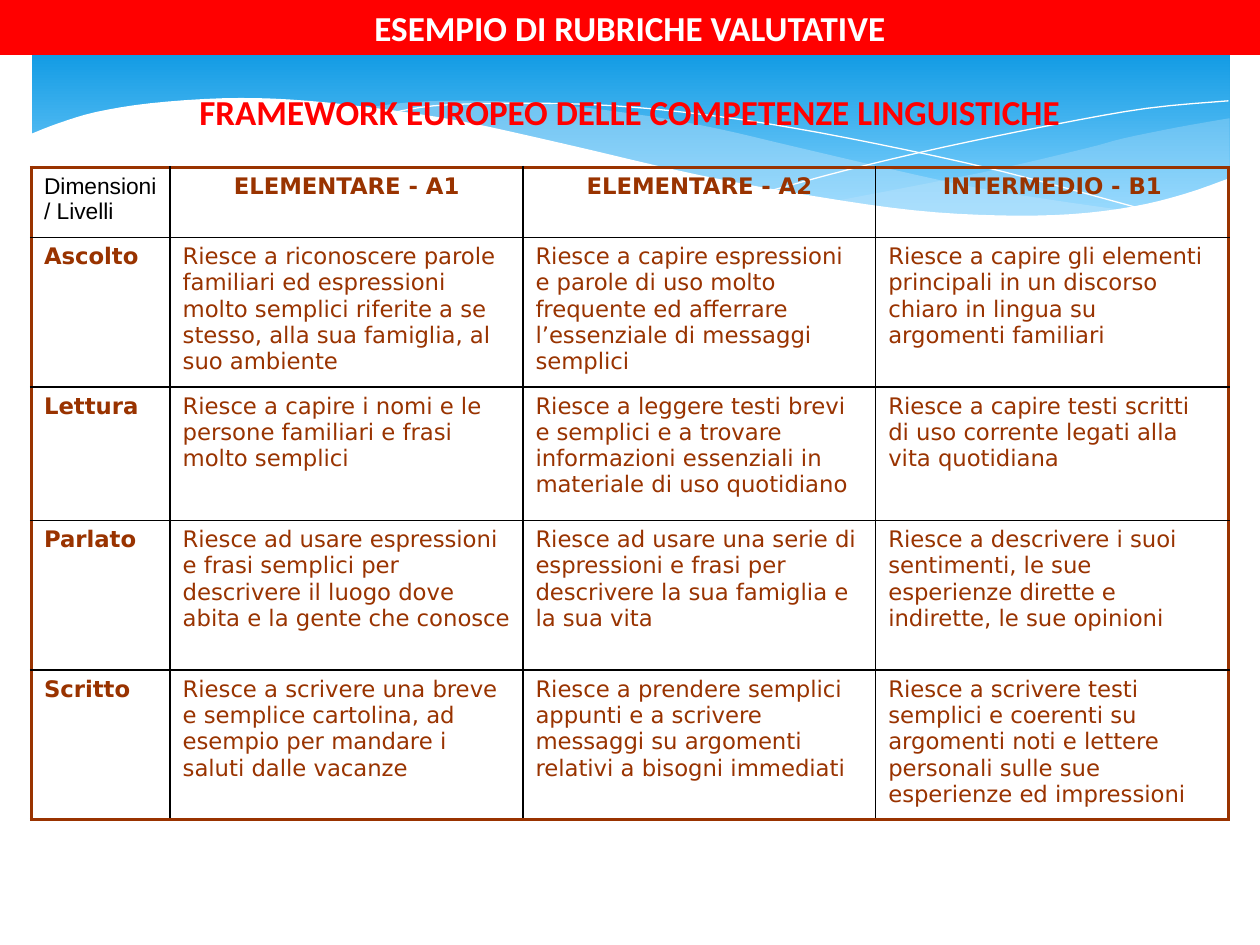
import pptx
import pptx.util
import pptx.dml.color
import pptx.enum.shapes
import pptx.enum.text
import pptx.oxml.ns
from dataclasses import dataclass
from lxml import etree
from typing import NamedTuple, Optional

UNIT = 91440  # one grid step: 100 columns by 75 rows fill the slide
COLS, ROWS = 100, 75
STEPS = 4  # segments drawn between two knots of a curve


@dataclass(frozen=True)
class Theme:
    red: str = "FF0000"
    white: str = "FFFFFF"
    black: str = "000000"
    brown: str = "993300"
    deep: str = "0293E0"
    sky: str = "83D3FE"
    mist: str = "C6E7FC"
    head: str = "Calibri"
    body: str = "DejaVu Sans"
    plain: str = "Arial"
    large: float = 20
    small: float = 13
    thin: float = 1
    thick: float = 2.25


class Point(NamedTuple):
    x: float
    y: float


class Wave(NamedTuple):
    bends: list  # smooth curves that join at corners
    fill: Optional[str] = None
    alpha: int = 100


class Style(NamedTuple):
    font: str
    size: float
    color: str
    bold: bool = False
    center: bool = False


class Band(NamedTuple):
    top: float
    text: str
    color: str
    fill: Optional[str] = None


T = Theme()

WAVES = [
    Wave([[(97.5, 9.4), (93.5, 10.1), (89.1, 11), (86.1, 11.8), (77.9, 13.7), (66.1, 16)],
          [(66.1, 16), (71.9, 16.7), (76.9, 17.1), (82.4, 17.2), (87.2, 16.9),
           (92.1, 16), (95, 15.2), (97.6, 14.1)],
          [(97.6, 14.1), (97.6, 9.4)]], T.mist, 29),
    Wave([[(89.3, 16.7), (83.7, 15.9), (77.5, 14.9), (70.6, 13.4), (62.9, 11.6),
           (56.9, 10.2), (51.4, 9.2), (44.2, 8.3), (38, 8), (32.8, 8.1), (28.6, 8.6)],
          [(28.6, 8.6), (34.2, 9.4), (40.4, 10.6), (49.1, 12.6), (58.4, 14.6),
           (66.5, 16.1), (73.6, 16.9), (80.7, 17.3), (85.7, 17.1), (89.3, 16.7)]],
         T.mist, 40),
    Wave([[(30.9, 9), (34.4, 8.4), (40.1, 8.2), (46.9, 8.3), (53.3, 8.8),
           (60.8, 9.8), (69.5, 11.4), (79.5, 13.6), (90.7, 16.6)]]),
    Wave([[(61.3, 15.1), (67.2, 13.5), (74.8, 11.7), (83.6, 9.9), (91, 8.6), (97.5, 8)]]),
    Wave([[(97.7, 14.1), (94, 15.4), (89.9, 16.4), (85, 17), (79.3, 17.1), (72.6, 16.7),
           (64.8, 15.6), (55.5, 13.9), (44.7, 11.4), (36.5, 9.6), (29.2, 8.5),
           (23, 7.9), (17.7, 7.8), (11.9, 8.2), (7.6, 8.9), (4.6, 9.8), (2.3, 10.7)],
          [(2.3, 10.7), (2.3, 22.4)], [(97.7, 22.4), (97.7, 14.1)]], T.white),
]

WIDTHS = [11, 28, 28, 28]
HEIGHTS = [5.55, 11.85, 10.6, 11.9, 11.8]
GRID = [
    ["Dimensioni/ Livelli", "ELEMENTARE - A1", "ELEMENTARE - A2", "INTERMEDIO - B1"],
    ["Ascolto",
     "Riesce a riconoscere parole familiari ed espressioni molto semplici riferite a se stesso, alla sua famiglia, al suo ambiente",
     "Riesce a capire espressioni e parole di uso molto frequente ed afferrare l’essenziale di messaggi semplici",
     "Riesce a capire gli elementi principali in un discorso chiaro in lingua su argomenti familiari"],
    ["Lettura",
     "Riesce a capire i nomi e le persone familiari e frasi molto semplici",
     "Riesce a leggere testi brevi e semplici e a trovare informazioni essenziali in materiale di uso quotidiano",
     "Riesce a capire testi scritti di uso corrente legati alla vita quotidiana"],
    ["Parlato",
     "Riesce ad usare espressioni e frasi semplici per descrivere il luogo dove abita e la gente che conosce",
     "Riesce ad usare una serie di espressioni e frasi per descrivere la sua famiglia e la sua vita",
     "Riesce a descrivere i suoi sentimenti, le sue esperienze dirette e indirette, le sue opinioni"],
    ["Scritto",
     "Riesce a scrivere una breve e semplice cartolina, ad esempio per mandare i saluti dalle vacanze",
     "Riesce a prendere semplici appunti e a scrivere messaggi su argomenti relativi a bisogni immediati",
     "Riesce a scrivere testi semplici e coerenti su argomenti noti e lettere personali sulle sue esperienze ed impressioni"],
]


def emu(steps: float) -> int:
    return round(steps * UNIT)


def rgb(code: str) -> pptx.dml.color.RGBColor:
    return pptx.dml.color.RGBColor.from_string(code)


def curve(knots: list) -> list:
    """Points of a Catmull-Rom curve through the knots."""
    ends = [knots[0], *knots, knots[-1]]
    out = [Point(*knots[0])]
    for a, b, c, d in zip(ends, ends[1:], ends[2:], ends[3:]):
        for step in range(1, STEPS + 1):
            t = step / STEPS
            out.append(Point(*(
                b[k] + t / 2 * (c[k] - a[k]
                                + t * (2 * a[k] - 5 * b[k] + 4 * c[k] - d[k])
                                + t * t * (3 * b[k] - a[k] - 3 * c[k] + d[k]))
                for k in (0, 1))))
    return out


def write(frame, text: str, style: Style) -> None:
    frame.text = text
    frame.word_wrap = True
    para = frame.paragraphs[0]
    align = pptx.enum.text.PP_ALIGN
    para.alignment = align.CENTER if style.center else align.LEFT
    font = para.runs[0].font
    font.name, font.size, font.bold = style.font, pptx.util.Pt(style.size), style.bold
    font.color.rgb = rgb(style.color)


def draw_sky(shapes) -> None:
    kind = pptx.enum.shapes.MSO_SHAPE.ROUNDED_RECTANGLE
    sky = shapes.add_shape(kind, emu(2.5), emu(2.5), emu(95.1), emu(15.6))
    sky.adjustments[0] = 0.07
    sky.shadow.inherit = False
    sky.line.fill.background()
    sky.fill.gradient()
    sky.fill.gradient_angle = 270
    for stop, code, place in zip(sky.fill.gradient_stops, (T.deep, T.sky), (0, 0.9)):
        stop.color.rgb, stop.position = rgb(code), place


def draw_wave(shapes, wave: Wave) -> None:
    spots = [(emu(dot.x), emu(dot.y)) for bend in wave.bends for dot in curve(bend)]
    pen = shapes.build_freeform(*spots[0])
    pen.add_line_segments(spots[1:], close=wave.fill is not None)
    shape = pen.convert_to_shape()
    shape.shadow.inherit = False
    if wave.fill is None:
        shape.fill.background()
        shape.line.color.rgb = rgb(T.white)
        shape.line.width = pptx.util.Pt(0)
        return
    shape.line.fill.background()
    shape.fill.solid()
    shape.fill.fore_color.rgb = rgb(wave.fill)
    if wave.alpha < 100:
        tone = shape.element.spPr.find(".//" + pptx.oxml.ns.qn("a:srgbClr"))
        etree.SubElement(tone, pptx.oxml.ns.qn("a:alpha"), val=str(wave.alpha * 1000))


def draw_band(shapes, band: Band) -> None:
    area = (0, emu(band.top), emu(COLS), emu(4.35))
    if band.fill:
        box = shapes.add_shape(pptx.enum.shapes.MSO_SHAPE.RECTANGLE, *area)
        box.shadow.inherit = False
        box.line.fill.background()
        box.fill.solid()
        box.fill.fore_color.rgb = rgb(band.fill)
    else:
        box = shapes.add_textbox(*area)
    write(box.text_frame, band.text, Style(T.head, T.large, band.color, True, True))
    box.text_frame.vertical_anchor = pptx.enum.text.MSO_ANCHOR.TOP


def edge(cell, outer: dict) -> None:
    """Border a cell: thick brown on outer sides, thin black within."""
    props = cell._tc.get_or_add_tcPr()
    for spot, (side, out) in enumerate(outer.items()):
        width, code = (T.thick, T.brown) if out else (T.thin, T.black)
        line = etree.Element(pptx.oxml.ns.qn("a:ln" + side), w=str(int(pptx.util.Pt(width))))
        fill = etree.SubElement(line, pptx.oxml.ns.qn("a:solidFill"))
        etree.SubElement(fill, pptx.oxml.ns.qn("a:srgbClr"), val=code)
        props.insert(spot, line)


def draw_table(shapes) -> None:
    frame = shapes.add_table(len(HEIGHTS), len(WIDTHS), emu(2.5), emu(13.3),
                             emu(sum(WIDTHS)), emu(sum(HEIGHTS)))
    table = frame.table
    table.first_row = table.horz_banding = False
    for col, width in zip(table.columns, WIDTHS):
        col.width = emu(width)
    for row, height in zip(table.rows, HEIGHTS):
        row.height = emu(height)
    for r, texts in enumerate(GRID):
        for c, text in enumerate(texts):
            cell = table.cell(r, c)
            cell.fill.background()
            style = Style(T.body, T.small, T.brown, r == 0 or c == 0, r == 0)
            if r == c == 0:
                style = Style(T.plain, T.small, T.black)
            write(cell.text_frame, text, style)
            edge(cell, {"L": c == 0, "R": c == len(WIDTHS) - 1,
                        "T": r == 0, "B": r == len(HEIGHTS) - 1})


def main() -> None:
    deck = pptx.Presentation()
    deck.slide_width, deck.slide_height = emu(COLS), emu(ROWS)
    shapes = deck.slides.add_slide(deck.slide_layouts[6]).shapes
    # Sky and waves
    draw_sky(shapes)
    for wave in WAVES:
        draw_wave(shapes, wave)
    # Heading, table and top banner
    draw_band(shapes, Band(6.7, "FRAMEWORK EUROPEO DELLE COMPETENZE LINGUISTICHE", T.red))
    draw_table(shapes)
    draw_band(shapes, Band(0, "ESEMPIO DI RUBRICHE VALUTATIVE", T.white, T.red))
    deck.save("out.pptx")


if __name__ == "__main__":
    main()
